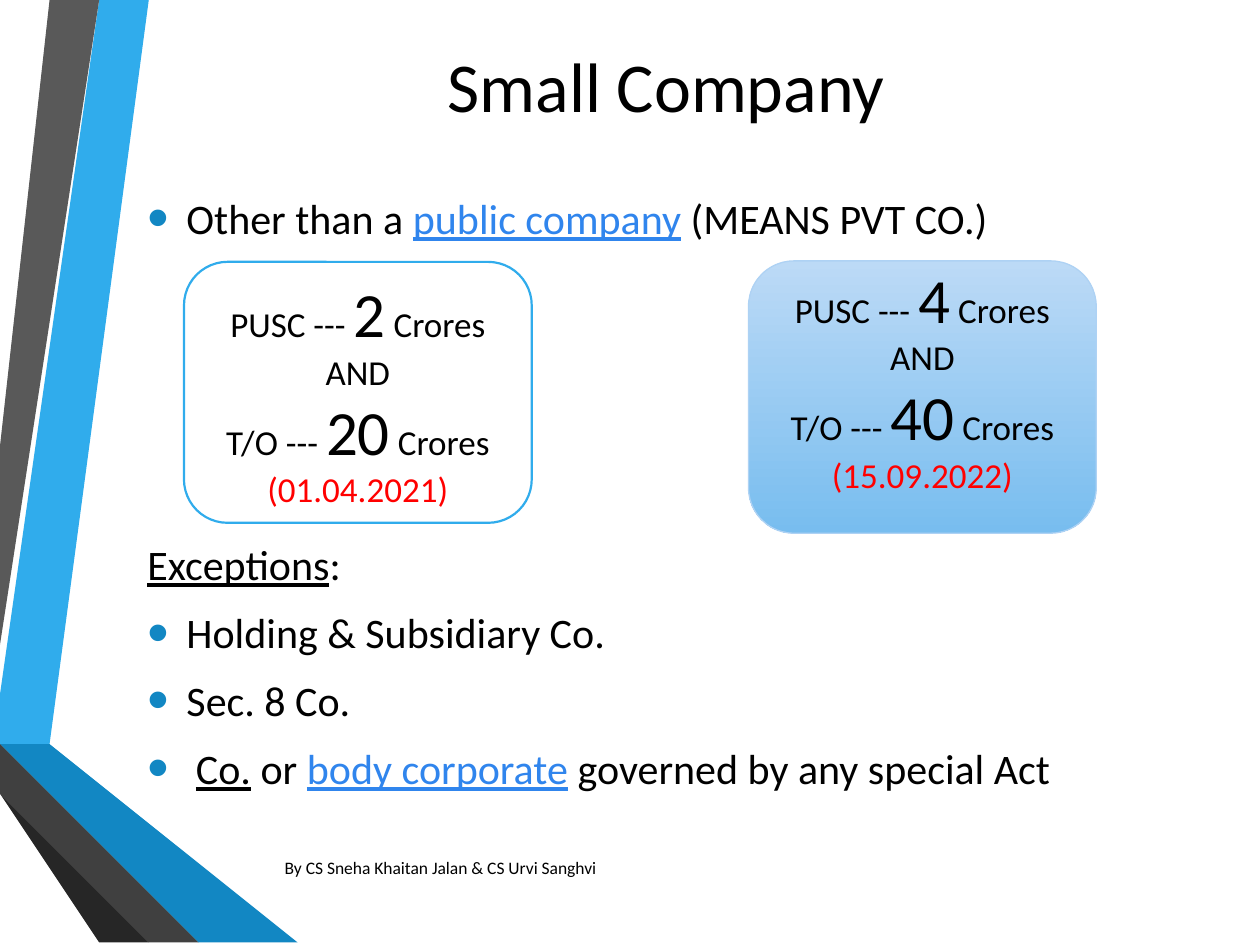
from lxml import etree
from pptx import Presentation
from pptx.dml.color import RGBColor
from pptx.enum.shapes import MSO_SHAPE
from pptx.enum.text import MSO_ANCHOR, PP_ALIGN
from pptx.oxml.ns import qn
from pptx.util import Cm, Pt

ROUND = MSO_SHAPE.ROUNDED_RECTANGLE
MIDDLE, TOP = MSO_ANCHOR.MIDDLE, MSO_ANCHOR.TOP
LEFT, CENTER = PP_ALIGN.LEFT, PP_ALIGN.CENTER

BLACK = RGBColor(0x00, 0x00, 0x00)
WHITE = RGBColor(0xFF, 0xFF, 0xFF)
RED = RGBColor(0xFF, 0x00, 0x00)
SKY = RGBColor(0x30, 0xAC, 0xEC)
BLUE = RGBColor(0x12, 0x87, 0xC3)
NAVY = RGBColor(0x0C, 0x5A, 0x82)
LINK = RGBColor(0x30, 0x85, 0xED)
GRAY = RGBColor(0x59, 0x59, 0x59)
DARK = RGBColor(0x40, 0x40, 0x40)
COAL = RGBColor(0x26, 0x26, 0x26)
PALE = RGBColor(0xBC, 0xDA, 0xF6)
AZURE = RGBColor(0x78, 0xBD, 0xEF)
EDGE = RGBColor(0xAE, 0xD2, 0xF4)

RIBBONS = [
    (SKY, [(0, 13.82), (0, 14.6), (0.56, 14.71), (2.97, 0), (2.26, 0)]),
    (GRAY, [(2.11, 0), (1.4, 0), (0, 8.53), (0, 12.85)]),
    (COAL, [(0, 15.72), (0, 15.77), (2.36, 19.05), (2.51, 19.05)]),
    (NAVY, [(0, 14.71), (0, 14.73), (3.96, 19.05), (4.14, 19.05)]),
    (BLUE, [(0, 14.71), (4.14, 19.05), (5.92, 19.05), (0.56, 14.71), (0, 14.6)]),
    (DARK, [(0, 15.72), (2.51, 19.05), (3.84, 19.05), (0, 14.88)]),
]


def add_text(par, text, size=24, color=BLACK, under=False):
    run = par.add_run()
    run.text = text
    font = run.font
    font.name, font.size, font.color.rgb = "Calibri", Pt(size), color
    if under:
        font.underline = True


def add_par(frame, first=False, align=LEFT):
    par = frame.paragraphs[0] if first else frame.add_paragraph()
    par.alignment = align
    return par


def add_box(slide, left, top, width, height, anchor=MIDDLE):
    box = slide.shapes.add_textbox(Cm(left), Cm(top), Cm(width), Cm(height))
    frame = box.text_frame
    frame.word_wrap = True
    frame.vertical_anchor = anchor
    return frame


def add_bullet(par):
    props = par._p.get_or_add_pPr()
    props.set("marL", str(Cm(0.79)))
    props.set("indent", str(-Cm(0.79)))
    tint = etree.SubElement(props, qn("a:buClr"))
    etree.SubElement(tint, qn("a:srgbClr"), val=str(BLUE))
    etree.SubElement(props, qn("a:buSzPct"), val="145000")
    etree.SubElement(props, qn("a:buFont"), typeface="Arial")
    etree.SubElement(props, qn("a:buChar"), char="•")


def add_ribbon(slide, color, points):
    start, *rest = points
    builder = slide.shapes.build_freeform(*start, scale=Cm(1))
    builder.add_line_segments(rest, close=True)
    shape = builder.convert_to_shape()
    shape.shadow.inherit = False
    shape.fill.solid()
    shape.fill.fore_color.rgb = color
    shape.line.fill.background()


def add_card(slide, left, top, height, edge, weight, capital, sales, date):
    card = slide.shapes.add_shape(ROUND, Cm(left), Cm(top), Cm(7.01), Cm(height))
    card.shadow.inherit = False
    card.line.color.rgb = edge
    card.line.width = Pt(weight)
    frame = card.text_frame
    frame.word_wrap = True
    frame.vertical_anchor = MIDDLE
    rows = [
        [("PUSC --- ", 20, BLACK), (capital, 36, BLACK), (" Crores", 20, BLACK)],
        [("AND", 20, BLACK)],
        [("T/O --- ", 20, BLACK), (sales, 36, BLACK), (" Crores", 20, BLACK)],
        [(date, 20, RED)],
    ]
    for i, row in enumerate(rows):
        par = add_par(frame, i == 0, CENTER)
        for text, size, color in row:
            add_text(par, text, size=size, color=color)
    return card


def add_body(slide):
    frame = add_box(slide, 2.72, 3.76, 21.41, 14.2, TOP)
    link = {"color": LINK, "under": True}
    rows = [
        (0, True, [("Other than a ", {}), ("public company", link),
                   (" (MEANS PVT CO.)", {})]),
        (163, False, [("Exceptions", {"under": True}), (":", {})]),
        (4, True, [("Holding & Subsidiary Co.", {})]),
        (4, True, [("Sec. 8 Co.", {})]),
        (4, True, [(" ", {}), ("Co.", {"under": True}), (" or ", {}),
                   ("body corporate", link),
                   (" governed by any special Act", {})]),
    ]
    for i, (before, bullet, runs) in enumerate(rows):
        par = add_par(frame, i == 0)
        par.space_before, par.space_after = Pt(before), Pt(6)
        if bullet:
            add_bullet(par)
        for text, style in runs:
            add_text(par, text, **style)


def main():
    deck = Presentation()
    deck.slide_width, deck.slide_height = Cm(25.4), Cm(19.05)
    slide = deck.slides.add_slide(deck.slide_layouts[6])

    for color, points in RIBBONS:
        add_ribbon(slide, color, points)

    title = add_box(slide, 2.72, 0.48, 21.41, 2.46)
    add_text(add_par(title, True, CENTER), "Small Company", size=40)
    add_body(slide)

    old = add_card(slide, 3.71, 5.28, 5.26, SKY, 1.25, "2", "20", "(01.04.2021)")
    old.fill.solid()
    old.fill.fore_color.rgb = WHITE

    credit = add_box(slide, 5.49, 16.97, 14.76, 1.02)
    add_text(add_par(credit, True), "By CS Sneha Khaitan Jalan & CS Urvi Sanghvi", size=10)

    new = add_card(slide, 15.09, 5.26, 5.49, EDGE, 0.75, "4", "40", "(15.09.2022)")
    new.text_frame.margin_bottom = Cm(0.9)
    new.fill.gradient()
    new.fill.gradient_angle = 270
    for stop, color, place in zip(new.fill.gradient_stops, (PALE, AZURE), (0, 1)):
        stop.color.rgb = color
        stop.position = place

    deck.save("out.pptx")


if __name__ == "__main__":
    main()
